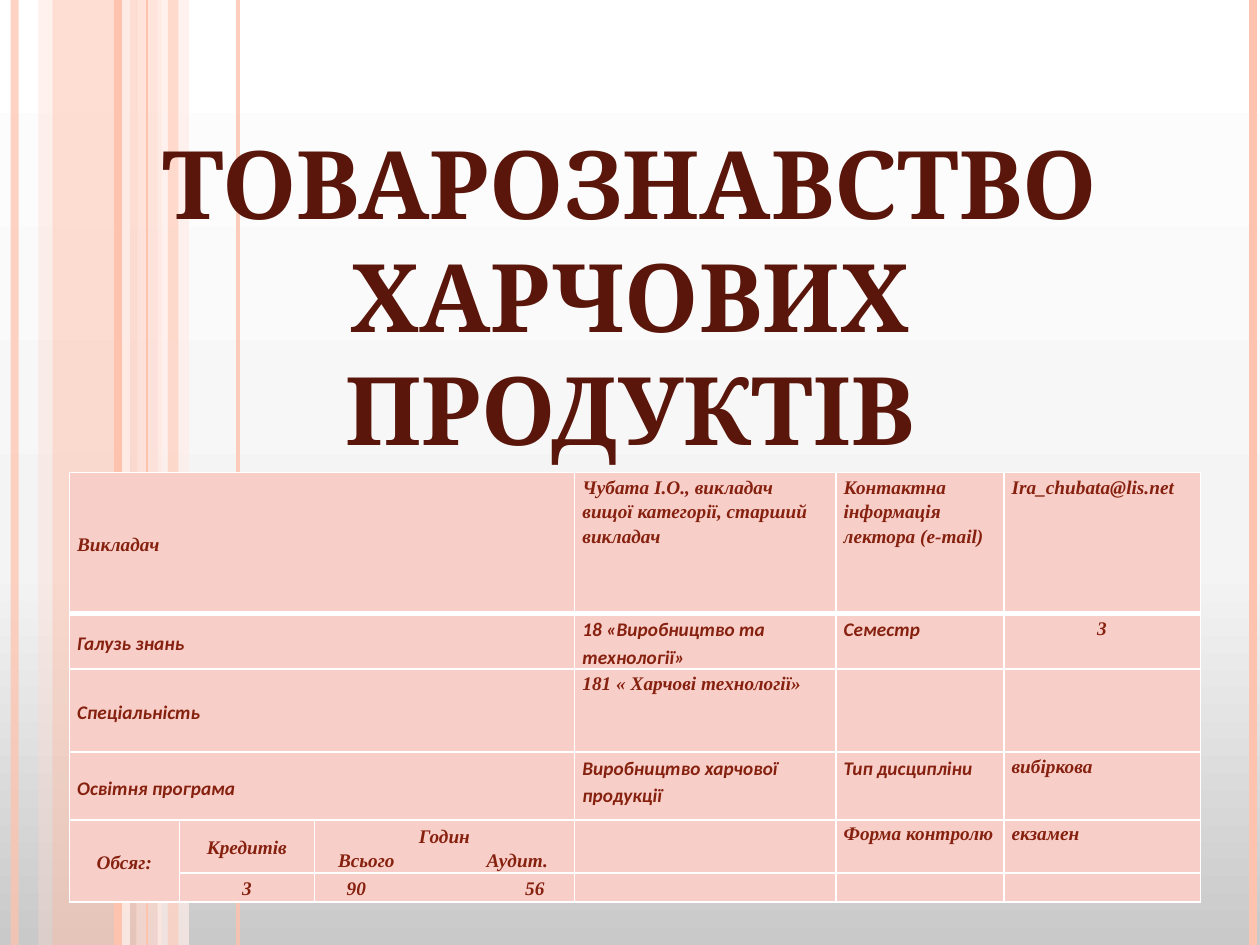
from pptx import Presentation, util as u
from pptx.dml.color import RGBColor
from pptx.enum import shapes, text
from pptx.oxml import ns, xmlchemy

Pt = u.Pt
HEIGHT = 540
SERIF, SANS = "Times New Roman", "Calibri"


def color(value):
    return RGBColor.from_string(value)


def add(parent, tag, **attributes):
    """Append a DrawingML element and return it."""
    element = xmlchemy.OxmlElement(tag)
    for name, value in attributes.items():
        element.set(name, str(value))
    parent.append(element)
    return element


deck = Presentation()
deck.slide_width, deck.slide_height = Pt(720), Pt(HEIGHT)
page = deck.slides.add_slide(deck.slide_layouts[6])

# Background: grey at the bottom, white at the top
page.background.fill.gradient()
stops = next(page._element.iter(ns.qn("a:gsLst")))
for stop in list(stops):
    stops.remove(stop)
for position, shade in [(0, "C9C9C9"), (40, "F4F4F4"), (100, "FFFFFF")]:
    stop = add(stops, "a:gs", pos=position * 1000)
    add(stop, "a:srgbClr", val=shade)
next(page._element.iter(ns.qn("a:lin"))).set("ang", "16200000")

# Vertical stripes: kind, left or centre, width, colour, opacity in percent
stripes = [
    ("band", 30, 48.5, "FEC3AE", 54),
    ("band", 21.9, 8.1, "FFD9CE", 36),
    ("band", 78, 14.4, "FFD9CE", 70),
    ("band", 90, 18, "FFEDE8", 71),
    ("line", 8.4, 4.5, "FEC3AE", 73),
    ("line", 72, 4.5, "FFEDE8", 83),
    ("line", 67.2, 4.5, "FEC3AE", 100),
    ("line", 136, 2.25, "FEC3AE", 82),
    ("line", 84, 0.75, "FEC3AE", 100),
    ("band", 96, 6, "FEC3AE", 51),
    ("line", 716, 4.5, "FEC3AE", 100),
]
for kind, x, width, shade, opacity in stripes:
    if kind == "band":
        stripe = page.shapes.add_shape(
            shapes.MSO_SHAPE.RECTANGLE, Pt(x), 0, Pt(width), Pt(HEIGHT))
        stripe.shadow.inherit = False
        stripe.line.fill.background()
        fill = stripe.fill
    else:
        stripe = page.shapes.add_connector(
            shapes.MSO_CONNECTOR.STRAIGHT, Pt(x), 0, Pt(x), Pt(HEIGHT))
        stripe.line.width = Pt(width)
        fill = stripe.line.fill
    fill.solid()
    fill.fore_color.rgb = color(shade)
    if kind == "line":
        add(stripe._element.spPr, "a:effectLst")
    if opacity < 100:
        tint = next(stripe._element.spPr.iter(ns.qn("a:srgbClr")))
        add(tint, "a:alpha", val=opacity * 1000)

# Title
box = page.shapes.add_textbox(Pt(28), Pt(67.7), Pt(664), Pt(203.8))
box.text_frame.word_wrap = True
para = box.text_frame.paragraphs[0]
para.alignment = text.PP_ALIGN.CENTER
span = para.add_run()
span.text = "ТОВАРОЗНАВСТВО ХАРЧОВИХ ПРОДУКТІВ"
span.font.name, span.font.size, span.font.bold = "Cambria", Pt(54), True
span.font.color.rgb = color("5A160B")

# Table grid
columns = [62.9, 77.2, 148.7, 149.3, 96, 112.3]
rows = [80.6, 31.7, 47.5, 38.9, 30.2, 16.6]
table = page.shapes.add_table(
    len(rows), len(columns), Pt(39.6), Pt(270), Pt(sum(columns)), Pt(sum(rows))).table
for column, width in zip(table.columns, columns):
    column.width = Pt(width)
for row, height in zip(table.rows, rows):
    row.height = Pt(height)
for r in range(4):
    table.cell(r, 0).merge(table.cell(r, 2))
table.cell(4, 0).merge(table.cell(5, 0))

# Cell look: pink fill, white borders, a thicker rule below the first row
for r in range(len(rows)):
    for c in range(len(columns)):
        cell = table.cell(r, c)
        cell.margin_left = cell.margin_right = Pt(4.5)
        cell.margin_top, cell.margin_bottom = Pt(0.7), 0
        if c < 3:
            cell.vertical_anchor = text.MSO_ANCHOR.MIDDLE
        properties = cell._tc.get_or_add_tcPr()
        for side in "LRTB":
            heavy = (r, side) in [(0, "B"), (1, "T")]
            border = add(properties, "a:ln" + side, w=Pt(3 if heavy else 1))
            add(add(border, "a:solidFill"), "a:srgbClr", val="FFFFFF")
        cell.fill.solid()
        cell.fill.fore_color.rgb = color("F8CFC8")
        add(cell.text_frame.paragraphs[0]._p, "a:endParaRPr", sz=1100)

# Cell text: row, column, font, centred, line spacing, tab stops, wording
LOOSE, TIGHT = 1.15, Pt(13.5)
entries = [
    (0, 0, SERIF, False, LOOSE, [], "Викладач"),
    (0, 3, SERIF, False, LOOSE, [], "Чубата І.О., викладач вищої категорії, старший викладач"),
    (0, 4, SERIF, False, LOOSE, [], "Контактна інформація лектора (e-mail)"),
    (0, 5, SERIF, False, LOOSE, [], "Іra_chubata@lis.net"),
    (1, 0, SANS, False, LOOSE, [], "Галузь знань"),
    (1, 3, SANS, False, LOOSE, [], "18 «Виробництво та технології»"),
    (1, 4, SANS, False, LOOSE, [], "Семестр"),
    (1, 5, SERIF, True, LOOSE, [], "3"),
    (2, 0, SANS, False, LOOSE, [], "Спеціальність"),
    (2, 3, SERIF, False, LOOSE, [], "181 « Харчові технології»"),
    (3, 0, SANS, False, LOOSE, [], "Освітня програма"),
    (3, 3, SANS, False, LOOSE, [], "Виробництво харчової продукції"),
    (3, 4, SANS, False, LOOSE, [], "Тип дисципліни"),
    (3, 5, SERIF, False, LOOSE, [], "вибіркова"),
    (4, 0, SERIF, True, TIGHT, [], "Обсяг:"),
    (4, 1, SERIF, True, TIGHT, [], "Кредитів"),
    (4, 2, SERIF, True, LOOSE, [], "Годин"),
    (4, 2, SERIF, False, TIGHT, [9, 94], "\tВсього\tАудит."),
    (4, 4, SERIF, False, TIGHT, [], "Форма контролю"),
    (4, 5, SERIF, False, TIGHT, [], "екзамен"),
    (5, 1, SERIF, True, TIGHT, [], "3"),
    (5, 2, SERIF, False, TIGHT, [14, 116], "\t90\t56"),
]
for r, c, font, centred, spacing, tabs, wording in entries:
    frame = table.cell(r, c).text_frame
    para = frame.add_paragraph() if frame.text else frame.paragraphs[0]
    para.alignment = text.PP_ALIGN.CENTER if centred else text.PP_ALIGN.LEFT
    para.line_spacing = spacing
    if tabs:
        tab_list = add(para._p.get_or_add_pPr(), "a:tabLst")
        for position in tabs:
            add(tab_list, "a:tab", pos=Pt(position), algn="l")
    span = para.add_run()
    span.text = wording
    span.font.name, span.font.size = font, Pt(11)
    span.font.bold = span.font.italic = True
    span.font.color.rgb = color("862110")

deck.save("out.pptx")
